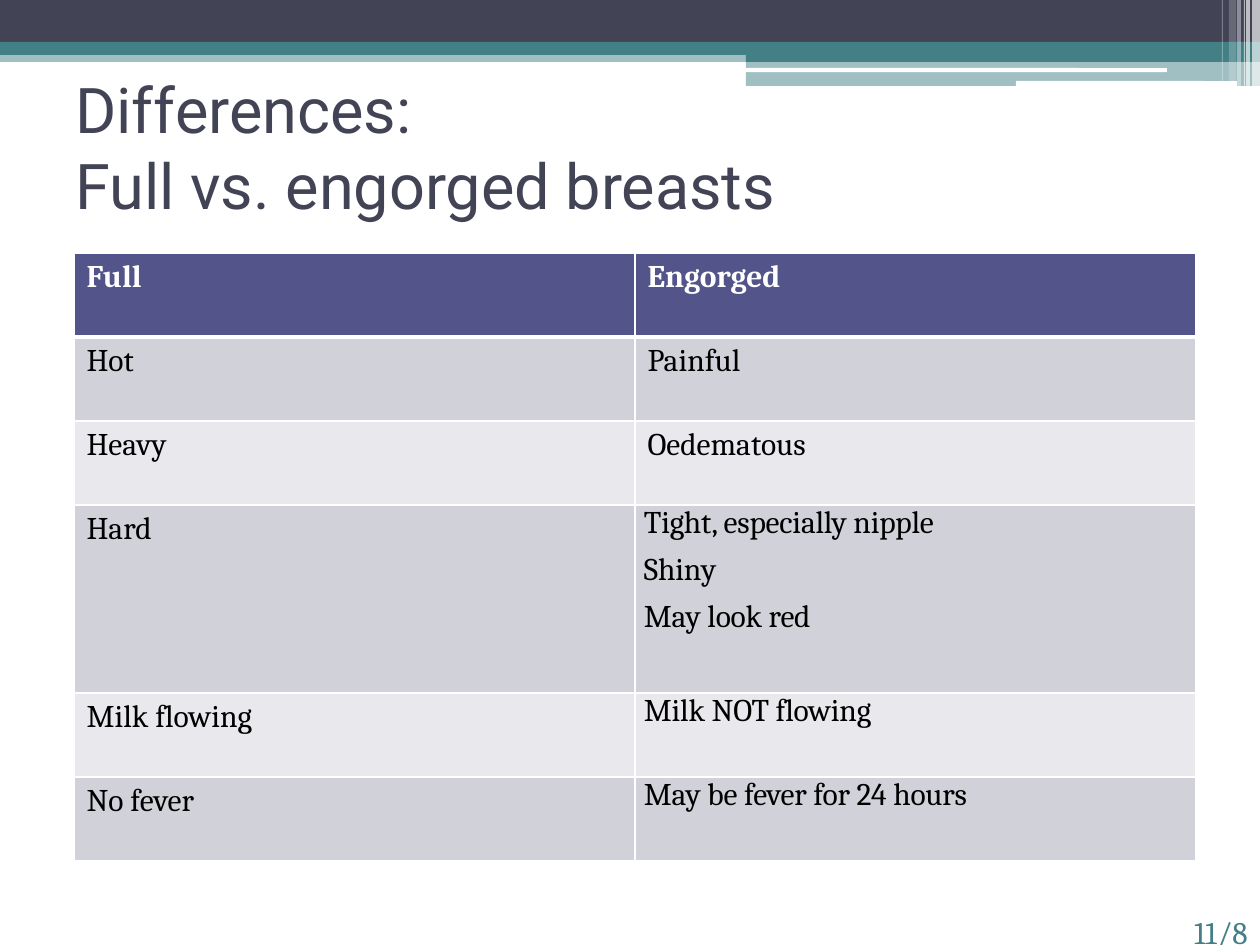
"""Build the slide that compares full and engorged breasts."""
from lxml.etree import SubElement
from pptx import Presentation
from pptx.dml.color import RGBColor
from pptx.enum.shapes import MSO_SHAPE
from pptx.enum.text import MSO_ANCHOR, PP_ALIGN
from pptx.oxml import parse_xml
from pptx.oxml.ns import nsdecls, qn
from pptx.util import Pt

EMU_PER_PX = 914400 / 126
COLORS = {
    "white": "FFFFFF",
    "black": "000000",
    "slate": "424456",
    "teal": "438086",
    "header": "53548A",
    "odd": "D1D1DA",
    "even": "E9E9ED",
}
BANDS = [
    (0, 50, 1260, 12, "teal", 50),
    (0, 0, 1260, 43, "slate", 100),
    (0, 42, 1260, 13, "teal", 100),
    (746, 49, 514, 13, "teal", 100),
    (746, 61, 514, 25, "teal", 50),
]
ROUNDED_STRIPES = [(745, 68, 422, 4), (1016, 81, 221, 5)]
CORNER_BARS = [
    (1252, 8, 86, 65),
    (1246, 4, 86, 65),
    (1244, 1, 86, 60),
    (1237, 4, 86, 40),
    (1229, 7, 81, 20),
    (1222, 1, 81, 30),
]
COMPARISON = [
    ("Full", "Engorged"),
    ("Hot", "Painful"),
    ("Heavy", "Oedematous"),
    ("Hard", "Tight, especially nipple\nShiny\nMay look red"),
    ("Milk flowing", "Milk NOT flowing"),
    ("No fever", "May be fever for 24 hours"),
]
ROW_HEIGHTS = [84, 84, 84, 188, 84, 84]
FIRST_TIGHT_ROW = 3


def px(length):
    return round(length * EMU_PER_PX)


def rgb(name):
    return RGBColor.from_string(COLORS[name])


def add_band(slide, left, top, width, height, color, opacity=100, kind=MSO_SHAPE.RECTANGLE):
    band = slide.shapes.add_shape(kind, px(left), px(top), px(width), px(height))
    band.shadow.inherit = False
    band.line.fill.background()
    band.fill.solid()
    band.fill.fore_color.rgb = rgb(color)
    if opacity < 100:
        tint = band.fill._xPr.find(qn("a:solidFill"))[0]
        SubElement(tint, qn("a:alpha")).set("val", str(opacity * 1000))


def style_paragraph(paragraph, font, size, color, bold=False):
    paragraph.font.name = font
    paragraph.font.size = Pt(size)
    paragraph.font.color.rgb = rgb(color)
    paragraph.font.bold = bold


def add_text(slide, left, top, width, height, text, font, size, color,
             align=PP_ALIGN.LEFT, anchor=MSO_ANCHOR.TOP, inset=6):
    frame = slide.shapes.add_textbox(px(left), px(top), px(width), px(height)).text_frame
    frame.word_wrap = True
    frame.vertical_anchor = anchor
    frame.margin_top = frame.margin_bottom = px(inset)
    paragraph = frame.paragraphs[0]
    paragraph.text = text
    paragraph.alignment = align
    style_paragraph(paragraph, font, size, color)


def set_borders(cell, widths):
    properties = cell._tc.get_or_add_tcPr()
    for index, (side, width) in enumerate(zip("LRTB", widths)):
        properties.insert(index, parse_xml(
            f'<a:ln{side} {nsdecls("a")} w="{Pt(width)}"><a:solidFill>'
            f'<a:srgbClr val="{COLORS["white"]}"/></a:solidFill></a:ln{side}>'))


def fill_cell(cell, text, row, tight):
    is_header = row == 0
    cell.fill.solid()
    cell.fill.fore_color.rgb = rgb("header" if is_header else "odd" if row % 2 else "even")
    set_borders(cell, (1, 1, 3 if row == 1 else 1, 3 if is_header else 1))
    cell.text = text
    if tight:
        cell.margin_left = cell.margin_right = px(9)
        cell.margin_top = cell.margin_bottom = 0
    for paragraph in cell.text_frame.paragraphs:
        style_paragraph(paragraph, "Cambria", 18, "white" if is_header else "black", is_header)
        if tight:
            paragraph.space_before = Pt(6)
            paragraph.runs[0].font._element.set("spc", "-10")


def add_comparison(slide, left, top, column_width):
    table = slide.shapes.add_table(
        len(COMPARISON), 2, px(left), px(top),
        px(2 * column_width), px(sum(ROW_HEIGHTS))).table
    for column in table.columns:
        column.width = px(column_width)
    for row, (texts, height) in enumerate(zip(COMPARISON, ROW_HEIGHTS)):
        table.rows[row].height = px(height)
        for column, text in enumerate(texts):
            tight = column == 1 and row >= FIRST_TIGHT_ROW
            fill_cell(table.cell(row, column), text, row, tight)


def main():
    deck = Presentation()
    deck.slide_width, deck.slide_height = px(1260), px(945)
    slide = deck.slides.add_slide(deck.slide_layouts[6])
    for band in BANDS:
        add_band(slide, *band)
    for stripe in ROUNDED_STRIPES:
        add_band(slide, *stripe, "white", kind=MSO_SHAPE.ROUNDED_RECTANGLE)
    for left, width, height, opacity in CORNER_BARS:
        add_band(slide, left, 0, width, height, "white", opacity)
    add_text(slide, 63, 73, 1134, 147, "Differences:\vFull vs. engorged breasts",
             "Roboto", 36, "slate", anchor=MSO_ANCHOR.MIDDLE)
    add_comparison(slide, 74, 253, 561)
    add_text(slide, 1081, 903, 179, 42, "11/8", "Cambria", 18, "teal",
             align=PP_ALIGN.RIGHT, inset=10)
    deck.save("out.pptx")


if __name__ == "__main__":
    main()
